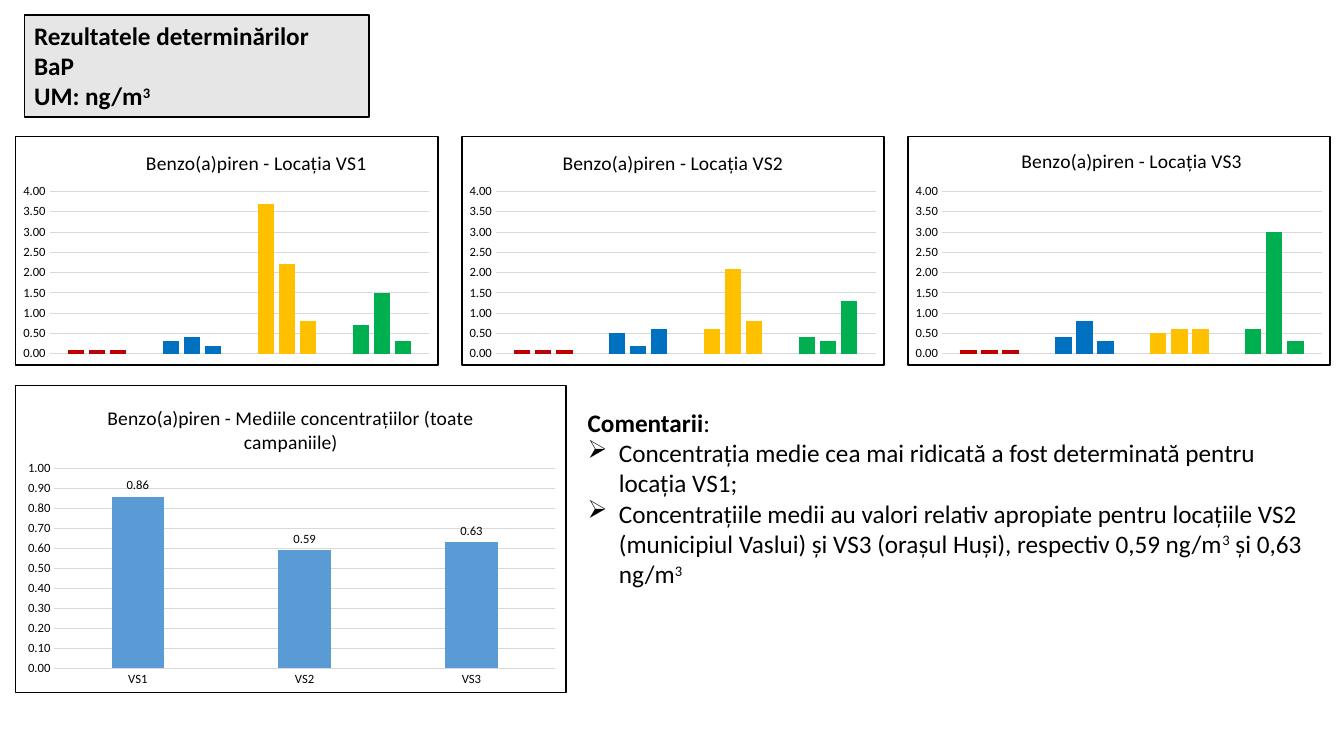
"""Build the slide with the benzo(a)pyrene results for three locations."""
from lxml import etree
from pptx import Presentation
from pptx.chart.data import CategoryChartData
from pptx.dml.color import RGBColor
from pptx.enum.chart import XL_CHART_TYPE, XL_LABEL_POSITION, XL_TICK_MARK
from pptx.enum.shapes import MSO_SHAPE
from pptx.enum.text import MSO_ANCHOR, PP_ALIGN
from pptx.oxml import parse_xml
from pptx.oxml.ns import nsdecls, qn
from pptx.util import Inches, Pt

HEADER = [["Rezultatele determinărilor"], ["BaP"], ["UM: ng/m", "3"]]
COMMENTS_TITLE = ("Comentarii", ":")
COMMENTS = [
    ["Concentrația medie cea mai ridicată a fost determinată pentru locația VS1;"],
    ["Concentrațiile medii au valori relativ apropiate pentru locațiile VS2 "
     "(municipiul Vaslui) și VS3 (orașul Huși), respectiv 0,59 ng/m",
     "3", " și 0,63 ng/m", "3"],
]
CAMPAIGNS = ["1", "2", "3", "4"]
LOCATIONS = [
    {"name": "VS1", "title_at": (0.3, 0.04),
     "series": [(0.1, 0.3, 3.7, 0.7), (0.1, 0.4, 2.2, 1.5), (0.1, 0.2, 0.8, 0.3)]},
    {"name": "VS2", "title_at": (0.23, 0.04),
     "series": [(0.1, 0.5, 0.6, 0.4), (0.1, 0.2, 2.1, 0.3), (0.1, 0.6, 0.8, 1.3)]},
    {"name": "VS3", "title_at": (0.26, 0.03),
     "series": [(0.1, 0.4, 0.5, 0.6), (0.1, 0.8, 0.6, 3), (0.1, 0.3, 0.6, 0.3)]},
]
MEANS = (0.86, 0.59, 0.63)
MEANS_TITLE = "Benzo(a)piren - Mediile concentrațiilor (toate campaniile)"

THEME = {
    "font": "Calibri", "text": "000000", "panel": "E7E6E6", "grid": "D9D9D9",
    "series": ["5B9BD5", "ED7D31", "A5A5A5"],
    "campaigns": ["C00000", "0070C0", "FFC000", "00B050"],
    "body": 18, "chart_title": 14, "chart": 10, "axis": 9,
}


def rgb(key):
    return RGBColor.from_string(THEME.get(key, key))


def style(font, size, bold=None):
    font.name, font.size, font.bold = THEME["font"], Pt(THEME[size]), bold
    font.color.rgb = rgb("text")


def write(p, parts, bold=False):
    style(p.font, "body", bold)
    p.alignment = PP_ALIGN.LEFT
    for part in parts:
        r = p.add_run()
        r.text = part
        if part == "3":
            r._r.get_or_add_rPr().set("baseline", "30000")


def add_bullet(p):
    pPr = p._p.get_or_add_pPr()
    pPr.set("marL", str(Inches(0.31)))
    pPr.set("indent", str(-Inches(0.31)))
    pPr.insert(0, parse_xml(f'<a:buChar {nsdecls("a")} char="➢"/>'))


def layout(**places):
    root = parse_xml(f'<c:layout {nsdecls("c")}><c:manualLayout/></c:layout>')
    for tag, val in places.items():
        etree.SubElement(root[0], qn(f"c:{tag}")).set("val", str(val))
    return root


def drop_layout(parent):
    for old in parent.findall(qn("c:layout")):
        parent.remove(old)


def place_parts(chart, title_at, plot_at):
    title = chart.chart_title._element
    drop_layout(title)
    x, y = title_at
    title.find(qn("c:tx")).addnext(layout(xMode="edge", yMode="edge", x=x, y=y))
    area = chart._chartSpace.chart.plotArea
    drop_layout(area)
    x, y, w, h = plot_at
    area.insert(0, layout(layoutTarget="inner", xMode="edge", yMode="edge", x=x, y=y, w=w, h=h))


def frame_chart(chart):
    chart._chartSpace.chart.addnext(parse_xml(
        f'<c:spPr {nsdecls("c", "a")}><a:solidFill><a:srgbClr val="FFFFFF"/></a:solidFill>'
        f'<a:ln w="{Pt(1)}"><a:solidFill><a:srgbClr val="{THEME["text"]}"/></a:solidFill></a:ln></c:spPr>'))


def grid_line(line):
    line.color.rgb, line.width = rgb("grid"), Pt(0.75)


def add_columns(slide, box, title, cats, series, title_at, plot_at):
    data = CategoryChartData(number_format="0.00")
    data.categories = cats
    for i, vals in enumerate(series, 1):
        data.add_series(f"Series {i}", vals)
    chart = slide.shapes.add_chart(
        XL_CHART_TYPE.COLUMN_CLUSTERED, *map(Inches, box), data).chart
    style(chart.font, "chart")
    chart.has_legend = False
    chart.has_title = True
    p = chart.chart_title.text_frame.paragraphs[0]
    p.text = title
    style(p.font, "chart_title", False)
    plot = chart.plots[0]
    plot.gap_width, plot.overlap, plot.vary_by_categories = 219, -27, False
    for s, color in zip(plot.series, THEME["series"]):
        s.format.fill.solid()
        s.format.fill.fore_color.rgb = rgb(color)
    for axis in (chart.value_axis, chart.category_axis):
        axis.major_tick_mark = axis.minor_tick_mark = XL_TICK_MARK.NONE
        style(axis.tick_labels.font, "axis")
    value = chart.value_axis
    value.minimum_scale = 0
    value.format.line.fill.background()
    grid_line(value.major_gridlines.format.line)
    value.tick_labels.number_format = "0.00"
    value.tick_labels.number_format_is_linked = False
    grid_line(chart.category_axis.format.line)
    place_parts(chart, title_at, plot_at)
    frame_chart(chart)
    return chart


def add_location(slide, i, loc):
    chart = add_columns(slide, (0.15 + i * 4.425, 1.35, 4.2, 2.28),
                        f"Benzo(a)piren - Locația {loc['name']}", CAMPAIGNS,
                        loc["series"], loc["title_at"], (0.08, 0.24, 0.9, 0.71))
    chart.value_axis.maximum_scale = 4
    chart.category_axis.visible = False
    for s in chart.plots[0].series:
        for j, color in enumerate(THEME["campaigns"]):
            fill = s.points[j].format.fill
            fill.solid()
            fill.fore_color.rgb = rgb(color)


def add_means(slide):
    chart = add_columns(slide, (0.15, 3.82, 5.47, 3.06), MEANS_TITLE,
                        [loc["name"] for loc in LOCATIONS], [MEANS],
                        (0.16, 0.05), (0.07, 0.27, 0.91, 0.65))
    labels = chart.plots[0].series[0].data_labels
    labels.show_value = True
    labels.number_format, labels.number_format_is_linked = "0.00", False
    labels.position = XL_LABEL_POSITION.OUTSIDE_END
    style(labels.font, "axis")


def add_header(slide):
    sp = slide.shapes.add_shape(MSO_SHAPE.RECTANGLE, *map(Inches, (0.24, 0.15, 3.42, 1.01)))
    sp.shadow.inherit = False
    sp.fill.solid()
    sp.fill.fore_color.rgb = rgb("panel")
    sp.line.color.rgb, sp.line.width = rgb("text"), Pt(1)
    tf = sp.text_frame
    tf.word_wrap, tf.vertical_anchor = True, MSO_ANCHOR.TOP
    for i, parts in enumerate(HEADER):
        write(tf.add_paragraph() if i else tf.paragraphs[0], parts, bold=True)


def add_comments(slide):
    tf = slide.shapes.add_textbox(*map(Inches, (5.73, 3.99, 7.52, 1.92))).text_frame
    tf.word_wrap = True
    write(tf.paragraphs[0], COMMENTS_TITLE)
    tf.paragraphs[0].runs[0].font.bold = True
    for parts in COMMENTS:
        p = tf.add_paragraph()
        write(p, parts)
        add_bullet(p)


def main():
    prs = Presentation()
    prs.slide_width, prs.slide_height = Inches(13.33), Inches(7.5)
    slide = prs.slides.add_slide(prs.slide_layouts[6])
    add_header(slide)
    for i, loc in enumerate(LOCATIONS):
        add_location(slide, i, loc)
    add_means(slide)
    add_comments(slide)
    prs.save("out.pptx")


if __name__ == "__main__":
    main()
